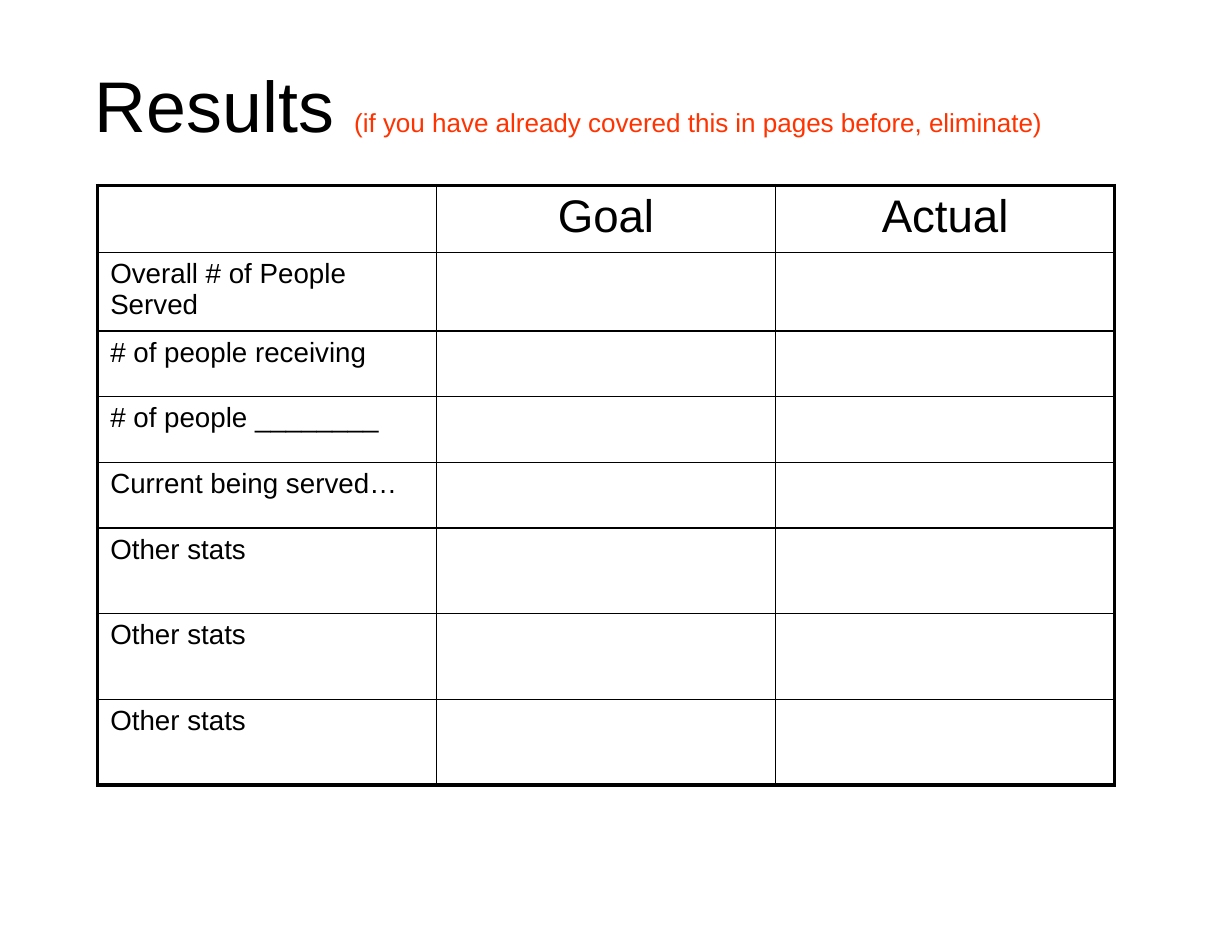
"""Build the results slide with its goal and actual table."""
from dataclasses import dataclass

from lxml.etree import SubElement
from pptx import Presentation
from pptx.dml.color import RGBColor
from pptx.enum.text import MSO_ANCHOR, PP_ALIGN
from pptx.oxml.ns import qn
from pptx.util import Inches, Pt


@dataclass(frozen=True)
class Theme:
    """Colours, type sizes and line widths of the slide."""
    font: str = "Arial"
    ink: str = "000000"
    accent: str = "FF3300"
    title: int = 44
    note: int = 16
    heading: int = 28
    label: int = 17
    inner_line: float = 1
    outer_line: float = 2.25


THEME = Theme()
SLIDE_WIDTH, SLIDE_HEIGHT = Inches(10.5), Inches(8)
HEADINGS = ["", "Goal", "Actual"]
LABELS = ["Overall # of People Served", "# of people receiving",
          "# of people ________", "Current being served…"] + ["Other stats"] * 3
ROW_HEIGHTS = [0.57, 0.67] + [0.56] * 3 + [0.73] * 3
COLUMN_WIDTH = 2.89


def add_text(paragraph, text, size, color=THEME.ink, align=PP_ALIGN.LEFT):
    """Append a formatted run to a paragraph."""
    paragraph.alignment = align
    run = paragraph.add_run()
    run.text = text
    run.font.name = THEME.font
    run.font.size = Pt(size)
    run.font.color.rgb = RGBColor.from_string(color)


def set_margins(target):
    """Give a text frame or a cell the common insets."""
    target.margin_left = target.margin_right = Inches(0.11)
    target.margin_top = target.margin_bottom = Inches(0.05)


def add_title(slide):
    """Add the title with its smaller coloured note."""
    shape = slide.shapes.add_textbox(Inches(0.7), Inches(0.44), Inches(8.93), Inches(0.89))
    frame = shape.text_frame
    frame.word_wrap = True
    frame.vertical_anchor = MSO_ANCHOR.MIDDLE
    set_margins(frame)
    paragraph = frame.paragraphs[0]
    add_text(paragraph, "Results ", THEME.title)
    add_text(paragraph, "(if you have already covered this in pages before, eliminate)",
             THEME.note, color=THEME.accent)


def set_borders(cell, outer_sides):
    """Draw the four cell borders, heavier on the outer sides."""
    properties = cell._tc.get_or_add_tcPr()
    for index, side in enumerate("LRTB"):
        width = THEME.outer_line if side in outer_sides else THEME.inner_line
        line = SubElement(properties, qn(f"a:ln{side}"), w=str(Pt(width)))
        fill = SubElement(line, qn("a:solidFill"))
        SubElement(fill, qn("a:srgbClr"), val=THEME.ink)
        properties.insert(index, line)


def add_results_table(slide):
    """Add the table of statistics with empty goal and actual cells."""
    row_count, column_count = len(ROW_HEIGHTS), len(HEADINGS)
    table = slide.shapes.add_table(
        row_count, column_count, Inches(0.83), Inches(1.58),
        Inches(COLUMN_WIDTH * column_count), Inches(sum(ROW_HEIGHTS))).table
    table.first_row = table.horz_banding = False
    for column in table.columns:
        column.width = Inches(COLUMN_WIDTH)
    rows = [HEADINGS] + [[label, "", ""] for label in LABELS]
    for row, (texts, height) in enumerate(zip(rows, ROW_HEIGHTS)):
        table.rows[row].height = Inches(height)
        for column, text in enumerate(texts):
            cell = table.cell(row, column)
            cell.fill.background()
            set_margins(cell)
            edges = {"L": column == 0, "R": column == column_count - 1,
                     "T": row == 0, "B": row == row_count - 1}
            set_borders(cell, [side for side, outer in edges.items() if outer])
            if text:
                add_text(cell.text_frame.paragraphs[0], text,
                         THEME.label if row else THEME.heading,
                         align=PP_ALIGN.LEFT if row else PP_ALIGN.CENTER)


def main():
    """Create and save the presentation."""
    presentation = Presentation()
    presentation.slide_width, presentation.slide_height = SLIDE_WIDTH, SLIDE_HEIGHT
    slide = presentation.slides.add_slide(presentation.slide_layouts[6])
    add_title(slide)
    add_results_table(slide)
    presentation.save("out.pptx")


if __name__ == "__main__":
    main()
